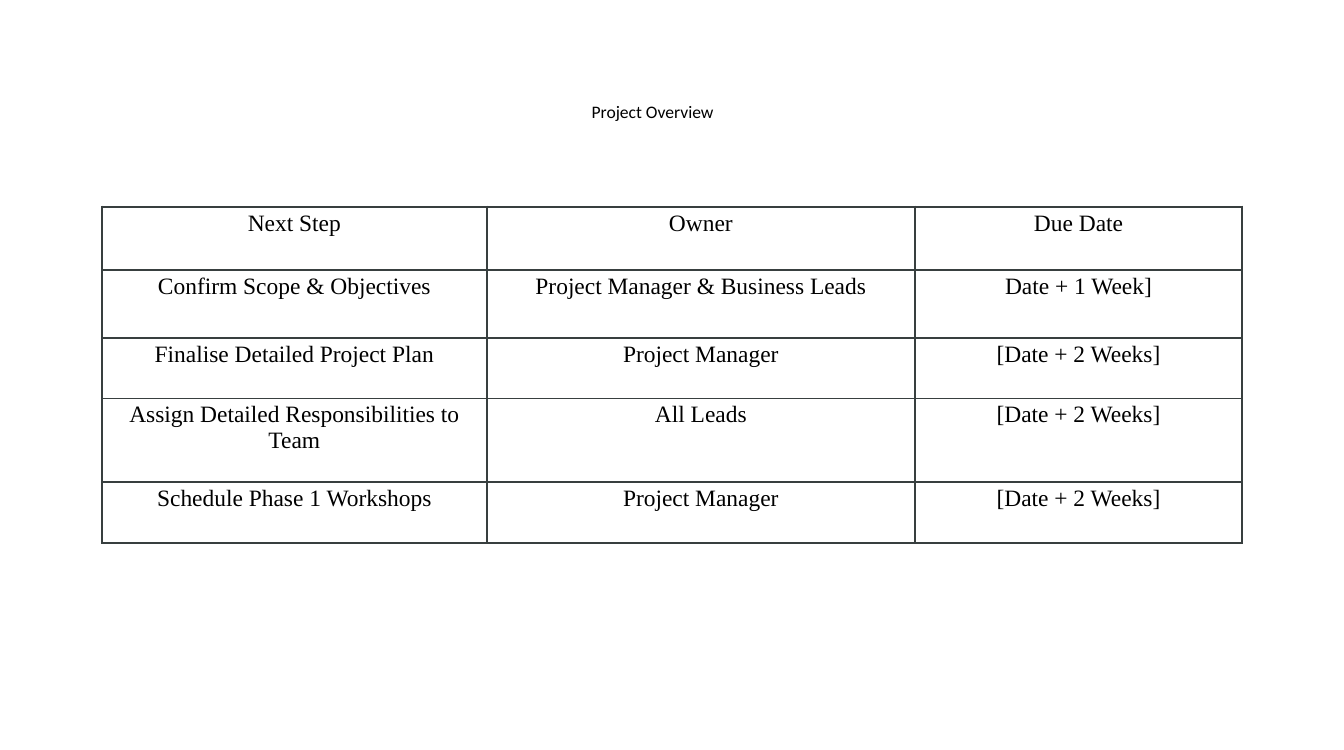
from lxml.etree import SubElement
from pptx import Presentation
from pptx.dml.color import RGBColor
from pptx.enum.text import MSO_ANCHOR, PP_ALIGN
from pptx.oxml.ns import qn
from pptx.util import Inches, Pt

TITLE = "Project Overview"
NEXT_STEPS = [
    ("Next Step", "Owner", "Due Date"),
    ("Confirm Scope & Objectives", "Project Manager & Business Leads", "Date + 1 Week]"),
    ("Finalise Detailed Project Plan", "Project Manager", "[Date + 2 Weeks]"),
    ("Assign Detailed Responsibilities to Team", "All Leads", "[Date + 2 Weeks]"),
    ("Schedule Phase 1 Workshops", "Project Manager", "[Date + 2 Weeks]"),
]
COLUMN_WIDTHS = [5.47, 6.09, 4.65]
ROW_HEIGHTS = [0.9, 0.97, 0.86, 1.19, 0.86]
COLORS = {"text": "000000", "border": "383F3F", "background": "FFFFFF"}
BORDER_WIDTH = Pt(2.21)


def format_paragraph(paragraph, font_name, size):
    paragraph.alignment = PP_ALIGN.CENTER
    paragraph.font.name = font_name
    paragraph.font.size = Pt(size)
    paragraph.font.color.rgb = RGBColor.from_string(COLORS["text"])


def add_borders(cell):
    """Draw all four sides; the lines must precede the fill in the cell properties."""
    properties = cell._tc.get_or_add_tcPr()
    for position, side in enumerate(("a:lnL", "a:lnR", "a:lnT", "a:lnB")):
        line = SubElement(properties, qn(side), w=str(BORDER_WIDTH))
        fill = SubElement(line, qn("a:solidFill"))
        SubElement(fill, qn("a:srgbClr"), val=COLORS["border"])
        properties.insert(position, line)


def add_title(slide):
    title = slide.shapes.title
    title.left, title.top = Inches(0.76), Inches(0.51)
    title.width, title.height = Inches(17.04), Inches(2.14)
    frame = title.text_frame
    frame.text = TITLE
    frame.vertical_anchor = MSO_ANCHOR.MIDDLE
    frame.margin_left = frame.margin_right = 0
    frame.margin_top = frame.margin_bottom = 0
    format_paragraph(frame.paragraphs[0], "Calibri", 18)


def add_next_steps_table(slide):
    table = slide.shapes.add_table(
        len(NEXT_STEPS), len(COLUMN_WIDTHS), Inches(1.45), Inches(2.94),
        Inches(sum(COLUMN_WIDTHS)), Inches(sum(ROW_HEIGHTS))).table
    table.first_row = False
    table.horz_banding = False
    for column, width in zip(table.columns, COLUMN_WIDTHS):
        column.width = Inches(width)
    for row, height, texts in zip(table.rows, ROW_HEIGHTS, NEXT_STEPS):
        row.height = Inches(height)
        for cell, text in zip(row.cells, texts):
            cell.text = text
            cell.fill.solid()
            cell.fill.fore_color.rgb = RGBColor.from_string(COLORS["background"])
            add_borders(cell)
            format_paragraph(cell.text_frame.paragraphs[0], "Times New Roman", 24)


def main():
    presentation = Presentation()
    presentation.slide_width = Inches(19.11)
    presentation.slide_height = Inches(10.67)
    # Title Only layout
    slide = presentation.slides.add_slide(presentation.slide_layouts[5])
    add_title(slide)
    add_next_steps_table(slide)
    presentation.save("out.pptx")


if __name__ == "__main__":
    main()
